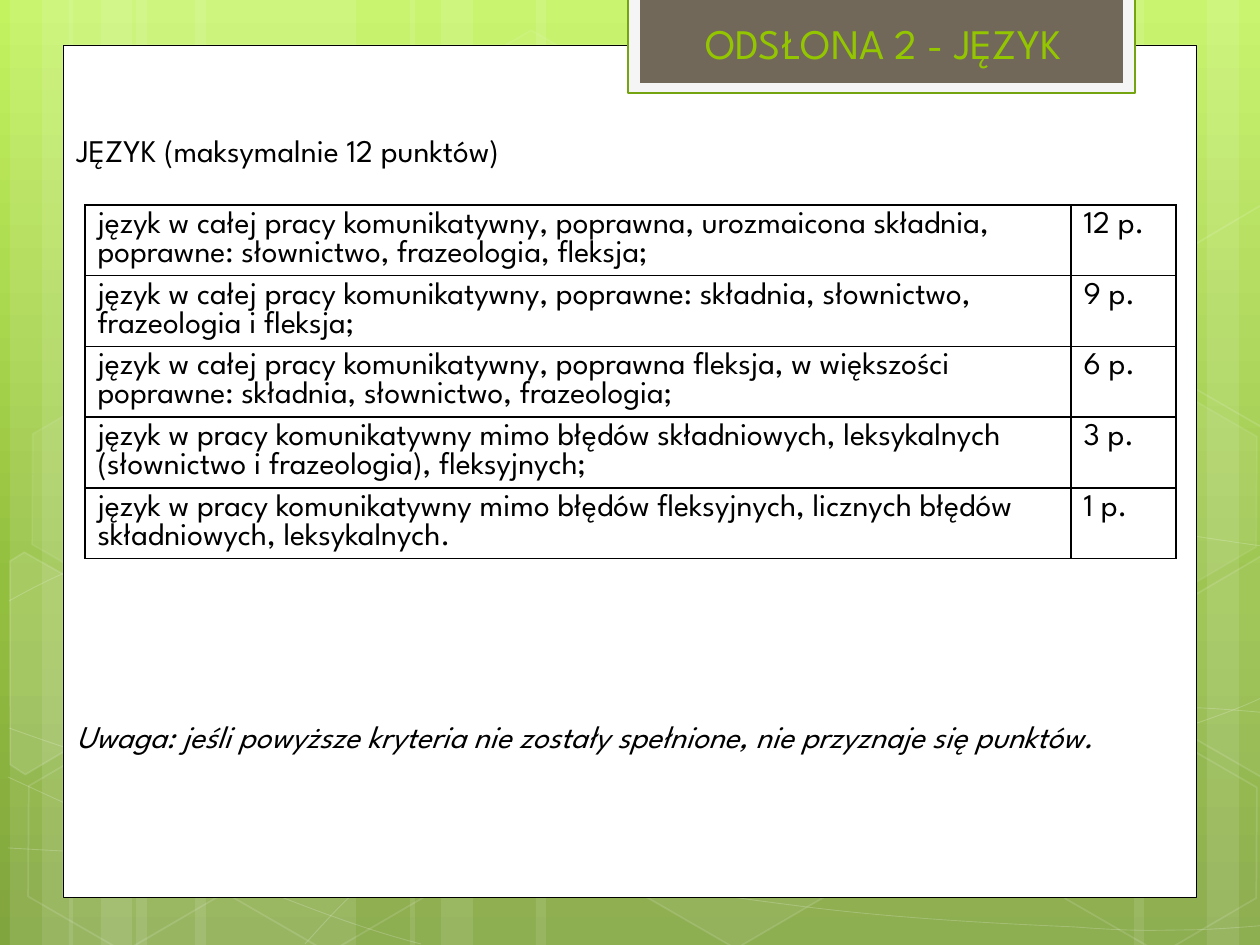
"""Build the language scoring slide with its green patterned background."""
import copy
import math

import lxml.etree
import pptx
import pptx.dml.color
import pptx.enum.shapes
import pptx.enum.text
import pptx.oxml.ns
import pptx.util

TITLE = "ODSŁONA 2 - JĘZYK"
HEADING = "JĘZYK (maksymalnie 12 punktów)"
NOTE = "Uwaga: jeśli powyższe kryteria nie zostały spełnione, nie przyznaje się punktów."
CRITERIA = [
    ("język w całej pracy komunikatywny, poprawna, urozmaicona składnia, "
     "poprawne: słownictwo, frazeologia, fleksja;", "12 p."),
    ("język w całej pracy komunikatywny, poprawne: składnia, słownictwo, "
     "frazeologia i fleksja;", "9 p."),
    ("język w całej pracy komunikatywny, poprawna fleksja, w większości "
     "poprawne: składnia, słownictwo, frazeologia;", "6 p."),
    ("język w pracy komunikatywny mimo błędów składniowych, leksykalnych "
     "(słownictwo i frazeologia), fleksyjnych;", "3 p."),
    ("język w pracy komunikatywny mimo błędów fleksyjnych, licznych błędów "
     "składniowych, leksykalnych.", "1 p."),
]
FONT = "League Spartan"
WHITE, BLACK, GREEN = "FFFFFF", "000000", "94C600"
GRADIENT = [(0, "C3F35F"), (0.62, "93BF3F"), (1, "81A53E")]
SCALE = 914400 / 126
PAGE_WIDTH, PAGE_HEIGHT = 1260, 945
TILT = 30

# (left, width)
BANDS = [(136, 220), (10, 63), (42, 105), (195, 220), (69, 63), (101, 105),
         (924, 220), (1207, 63), (1134, 105), (536, 388), (410, 63), (441, 105)]
# start point, then three points for each curve
WAVES = [
    [(8, 848), (77, 852), (145, 856), (239, 854), (334, 853), (451, 851), (577, 838),
     (703, 825), (882, 801), (998, 777), (1113, 753), (1231, 715), (1269, 694)],
    [(9, 601), (45, 581), (82, 562), (152, 543), (224, 522), (326, 496), (437, 488),
     (549, 479), (685, 478), (824, 488), (963, 498), (1193, 537), (1269, 547)],
    [(8, 777), (160, 847), (311, 916), (421, 944)],
    [(9, 728), (48, 742), (88, 756), (161, 776), (234, 795), (344, 827), (450, 848),
     (554, 869), (687, 892), (791, 905), (896, 919), (1008, 924), (1075, 927),
     (1140, 932), (1158, 930), (1191, 930), (1223, 929), (1246, 927), (1269, 925)],
    [(305, 944), (328, 919), (350, 893), (381, 871), (411, 848), (454, 823), (489, 805),
     (524, 788), (546, 780), (592, 767), (638, 754), (722, 737), (766, 728),
     (811, 719), (818, 719), (857, 717), (896, 713), (958, 709), (1000, 708),
     (1045, 707), (1116, 708), (1116, 708), (1144, 708), (1173, 708), (1201, 708),
     (1223, 709), (1245, 711), (1268, 713)],
]
# (left, top, fill opacity, line opacity)
HEXAGONS = [(421, 45, 4, 8), (626, 742, 6, 12), (14, 745, 0, 12), (18, 393, 7, 8),
            (219, 746, 0, 12), (949, 571, 10, 12), (1051, 747, 0, 12), (1051, 396, 7, 8)]
# (fill opacity, centre, corners)
CUT_HEXAGONS = [
    (10, (45, 674), [(10, 561), (24, 552), (121, 607), (120, 718), (25, 774), (10, 765)]),
    (4, (1241, 655), [(1167, 611), (1261, 556), (1271, 562), (1271, 772), (1263, 777),
                      (1167, 722)]),
    (0, (1241, 304), [(1167, 261), (1261, 205), (1273, 212), (1271, 422), (1263, 427),
                      (1167, 372)]),
]
# (box, fill, line, line width)
PANELS = [((63, 45, 1134, 853), WHITE, BLACK, 0.5),
          ((628, -3, 507, 96), "F5F5F5", "74A510", 1.25),
          ((640, -3, 483, 86), "71685A", None, 0)]


def px(length):
    return pptx.util.Emu(round(length * SCALE))


def color(code):
    return pptx.dml.color.RGBColor.from_string(code)


def paint(fill, code, opacity=100):
    if not opacity:
        fill.background()
        return
    fill.solid()
    fill.fore_color.rgb = color(code)
    if opacity < 100:
        for node in fill._xPr.iter(pptx.oxml.ns.qn("a:srgbClr")):
            alpha = lxml.etree.SubElement(node, pptx.oxml.ns.qn("a:alpha"))
            alpha.set("val", str(opacity * 1000))


def dress(shape, fill, opacity, line, width, line_opacity=100):
    shape.shadow.inherit = False
    paint(shape.fill, fill, opacity)
    if line is None:
        shape.line.fill.background()
        return
    shape.line.width = pptx.util.Pt(width)
    paint(shape.line.fill, line, line_opacity)


def add_preset(page, kind, box):
    return page.shapes.add_shape(kind, *map(px, box))


def add_outline(page, points, close):
    builder = page.shapes.build_freeform(*points[0], scale=SCALE)
    builder.add_line_segments(points[1:], close=close)
    return builder.convert_to_shape()


def add_wave(page, points):
    wave = add_outline(page, points, False)
    segments = list(wave.element.iter(pptx.oxml.ns.qn("a:lnTo")))
    for start in range(0, len(segments), 3):
        trio = segments[start:start + 3]
        curve = lxml.etree.Element(pptx.oxml.ns.qn("a:cubicBezTo"))
        trio[0].addprevious(curve)
        for segment in trio:
            curve.append(segment[0])
            segment.getparent().remove(segment)
    return wave


def turn_back(point, centre):
    angle = math.radians(-TILT)
    x, y = point[0] - centre[0], point[1] - centre[1]
    return (centre[0] + x * math.cos(angle) - y * math.sin(angle),
            centre[1] + x * math.sin(angle) + y * math.cos(angle))


def write(frame, text, size=18, code=BLACK, italic=None):
    para = frame.paragraphs[0]
    span = para.add_run()
    span.text = text
    span.font.name = FONT
    span.font.size = pptx.util.Pt(size)
    span.font.italic = italic
    span.font.color.rgb = color(code)
    return para


def paint_background(page):
    fill = page.background.fill
    fill.gradient()
    fill.gradient_angle = 270
    stop_list = next(page.element.iter(pptx.oxml.ns.qn("a:gsLst")))
    stop_list.insert(1, copy.deepcopy(stop_list[0]))
    for stop, (position, code) in zip(fill.gradient_stops, GRADIENT):
        stop.position = position
        stop.color.rgb = color(code)


def draw_pattern(page):
    kinds = pptx.enum.shapes.MSO_SHAPE
    for left, width in BANDS:
        band = add_preset(page, kinds.RECTANGLE, (left, 0, width, PAGE_HEIGHT))
        dress(band, WHITE, 10, None, 0)
    for points in WAVES:
        dress(add_wave(page, points), WHITE, 0, WHITE, 0.5, 20)
    for left, top, opacity, line_opacity in HEXAGONS:
        hexagon = add_preset(page, kinds.HEXAGON, (left, top, 220, 192))
        hexagon.adjustments[0], hexagon.adjustments[1] = 0.285, 1.155
        hexagon.rotation = TILT
        dress(hexagon, WHITE, opacity, WHITE, 1, line_opacity)
    for opacity, centre, corners in CUT_HEXAGONS:
        piece = add_outline(page, [turn_back(corner, centre) for corner in corners], True)
        piece.rotation = TILT
        dress(piece, WHITE, opacity, WHITE, 1, 12)
    for box, fill, line, width in PANELS:
        dress(add_preset(page, kinds.RECTANGLE, box), fill, 100, line, width)


def place_title(page):
    title = page.shapes.title
    title.left, title.top, title.width, title.height = map(px, (640, 0, 486, 86))
    page.shapes.element.append(title.element)
    title.text_frame.vertical_anchor = pptx.enum.text.MSO_ANCHOR.MIDDLE
    para = write(title.text_frame, TITLE, 24, GREEN)
    para.alignment = pptx.enum.text.PP_ALIGN.CENTER


def add_border(cell):
    properties = cell._tc.get_or_add_tcPr()
    for index, side in enumerate(("lnL", "lnR", "lnT", "lnB")):
        line = lxml.etree.Element(pptx.oxml.ns.qn("a:" + side), w="12700")
        solid = lxml.etree.SubElement(line, pptx.oxml.ns.qn("a:solidFill"))
        lxml.etree.SubElement(solid, pptx.oxml.ns.qn("a:srgbClr"), val=BLACK)
        properties.insert(index, line)


def add_criteria(page):
    widths, row_height = (986, 105), 52
    frame = page.shapes.add_table(len(CRITERIA), len(widths), px(85), px(205),
                                  px(sum(widths)), px(441))
    table = frame.table
    table.first_row = table.horz_banding = False
    for column, width in zip(table.columns, widths):
        column.width = px(width)
    for row, texts in zip(table.rows, CRITERIA):
        row.height = px(row_height)
        for cell, text in zip(row.cells, texts):
            cell.fill.background()
            add_border(cell)
            write(cell.text_frame, text)
    frame.height = px(441)


def add_text(page, box, text, wrap, italic=None):
    frame = page.shapes.add_textbox(*map(px, box)).text_frame
    frame.word_wrap = wrap
    frame.auto_size = pptx.enum.text.MSO_AUTO_SIZE.SHAPE_TO_FIT_TEXT
    write(frame, text, italic=italic)


def main():
    deck = pptx.Presentation()
    deck.slide_width, deck.slide_height = px(PAGE_WIDTH), px(PAGE_HEIGHT)
    page = deck.slides.add_slide(deck.slide_layouts[5])
    paint_background(page)
    draw_pattern(page)
    place_title(page)
    add_criteria(page)
    add_text(page, (64, 125, 541, 50), HEADING, False)
    add_text(page, (64, 711, 1131, 89), NOTE, True, True)
    deck.save("out.pptx")


if __name__ == "__main__":
    main()
